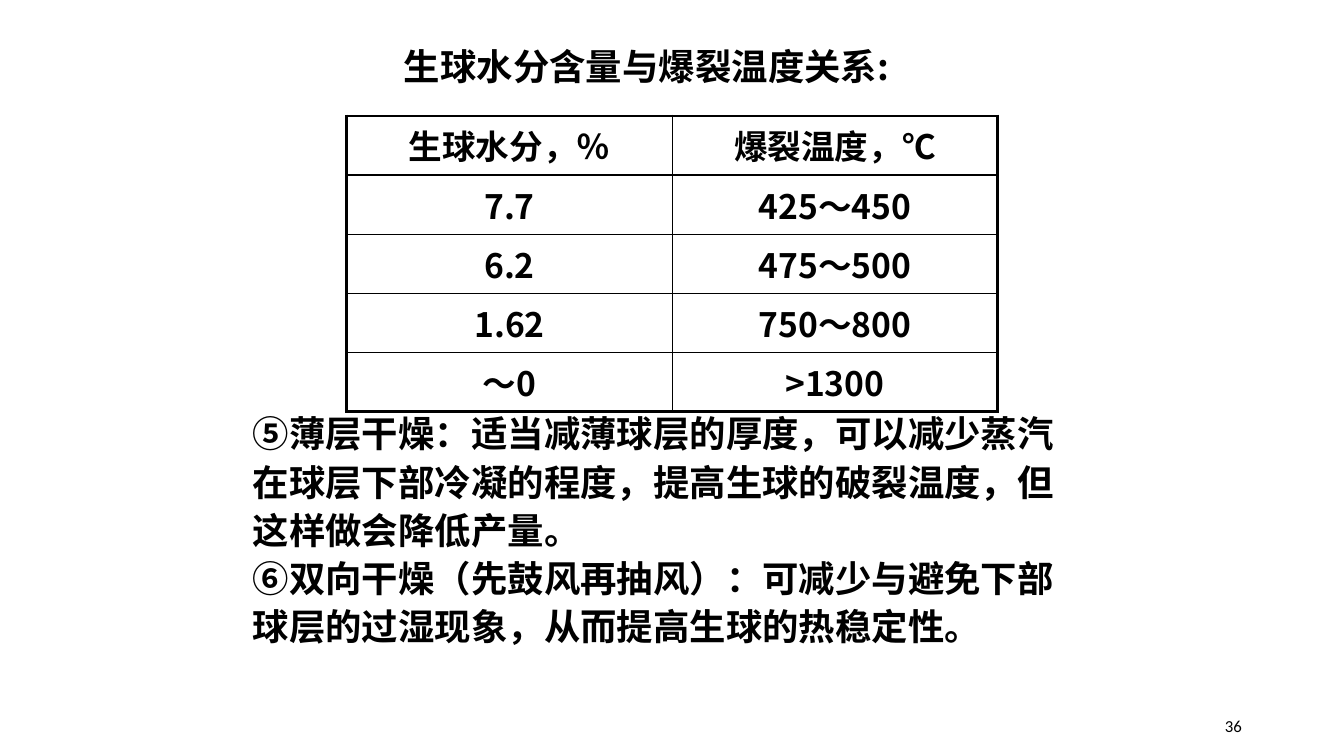
from dataclasses import dataclass

from lxml.etree import SubElement
from pptx import Presentation
from pptx.dml.color import RGBColor
from pptx.enum.text import MSO_ANCHOR, PP_ALIGN
from pptx.oxml.ns import qn
from pptx.util import Cm, Pt


@dataclass(frozen=True)
class Theme:
    ink: str = "000000"
    paper: str = "FFFFFF"
    cjk: str = "Noto Sans CJK SC"
    body: str = "Arial"
    number: str = "Calibri"
    text_size: float = 26
    table_size: float = 24
    number_size: float = 12
    outer_line: float = 2.25
    inner_line: float = 1


THEME = Theme()

HEADING = "生球水分含量与爆裂温度关系:"
MOISTURE_ROWS = [
    ("生球水分，％", "爆裂温度，℃"),
    ("7.7", "425～450"),
    ("6.2", "475～500"),
    ("1.62", "750～800"),
    ("～0", ">1300"),
]
DRYING_METHODS = [
    "⑤薄层干燥：适当减薄球层的厚度，可以减少蒸汽在球层下部冷凝的程度，提高生球的破裂温度，但这样做会降低产量。",
    "⑥双向干燥（先鼓风再抽风）：可减少与避免下部球层的过湿现象，从而提高生球的热稳定性。",
]


def style(paragraph, face, size, bold=True):
    font = paragraph.font
    font.name, font.size, font.bold = face, Pt(size), bold
    font.color.rgb = RGBColor.from_string(THEME.ink)
    # East Asian face, placed after the Latin one
    properties = paragraph._p.pPr.find(qn("a:defRPr"))
    SubElement(properties, qn("a:ea"), typeface=THEME.cjk)


def add_frame(slide, box):
    frame = slide.shapes.add_textbox(*box).text_frame
    frame.word_wrap = True
    return frame


def add_heading(slide, box):
    frame = add_frame(slide, box)
    frame.margin_right = 0
    heading = frame.paragraphs[0]
    heading.text = HEADING
    heading.line_spacing = 0.9
    style(heading, THEME.cjk, THEME.text_size)


def set_borders(cell, widths):
    """Draw the left, right, top and bottom borders, in that order."""
    properties = cell._tc.get_or_add_tcPr()
    for position, (side, width) in enumerate(zip("LRTB", widths)):
        line = properties.makeelement(qn(f"a:ln{side}"), {"w": str(Pt(width))})
        fill = SubElement(line, qn("a:solidFill"))
        SubElement(fill, qn("a:srgbClr"), val=THEME.ink)
        properties.insert(position, line)


def add_moisture_table(slide, box):
    left, top, width, height = box
    row_count, column_count = len(MOISTURE_ROWS), len(MOISTURE_ROWS[0])
    table = slide.shapes.add_table(row_count, column_count, *box).table
    for column in table.columns:
        column.width = width // column_count
    for r, values in enumerate(MOISTURE_ROWS):
        table.rows[r].height = height // row_count
        for c, value in enumerate(values):
            cell = table.cell(r, c)
            cell.fill.solid()
            cell.fill.fore_color.rgb = RGBColor.from_string(THEME.paper)
            entry = cell.text_frame.paragraphs[0]
            entry.text = value
            entry.alignment = PP_ALIGN.CENTER
            style(entry, THEME.cjk, THEME.table_size)
            on_edge = (c == 0, c == column_count - 1, r == 0, r == row_count - 1)
            set_borders(cell, [THEME.outer_line if edge else THEME.inner_line
                               for edge in on_edge])


def add_drying_methods(slide, box):
    frame = add_frame(slide, box)
    for index, text in enumerate(DRYING_METHODS):
        method = frame.add_paragraph() if index else frame.paragraphs[0]
        method.text = text
        method.line_spacing = Pt(34.4)
        style(method, THEME.body, THEME.text_size)


def add_page_number(slide, box):
    frame = add_frame(slide, box)
    frame.vertical_anchor = MSO_ANCHOR.BOTTOM
    number = frame.paragraphs[0]
    number.text = "36"
    number.alignment = PP_ALIGN.RIGHT
    style(number, THEME.number, THEME.number_size, bold=False)


def main():
    deck = Presentation()
    deck.slide_width, deck.slide_height = Cm(33.87), Cm(19.05)
    slide = deck.slides.add_slide(deck.slide_layouts[6])

    # Heading and data
    add_heading(slide, (Cm(9.93), Cm(1.12), Cm(12.95), Cm(1.8)))
    add_moisture_table(slide, (Cm(8.74), Cm(2.92), Cm(16.4), Cm(7.45)))

    # Explanation and footer
    add_drying_methods(slide, (Cm(6.12), Cm(10.13), Cm(21), Cm(6.35)))
    add_page_number(slide, (Cm(23.93), Cm(17.65), Cm(7.62), Cm(1.02)))

    deck.save("out.pptx")


if __name__ == "__main__":
    main()
